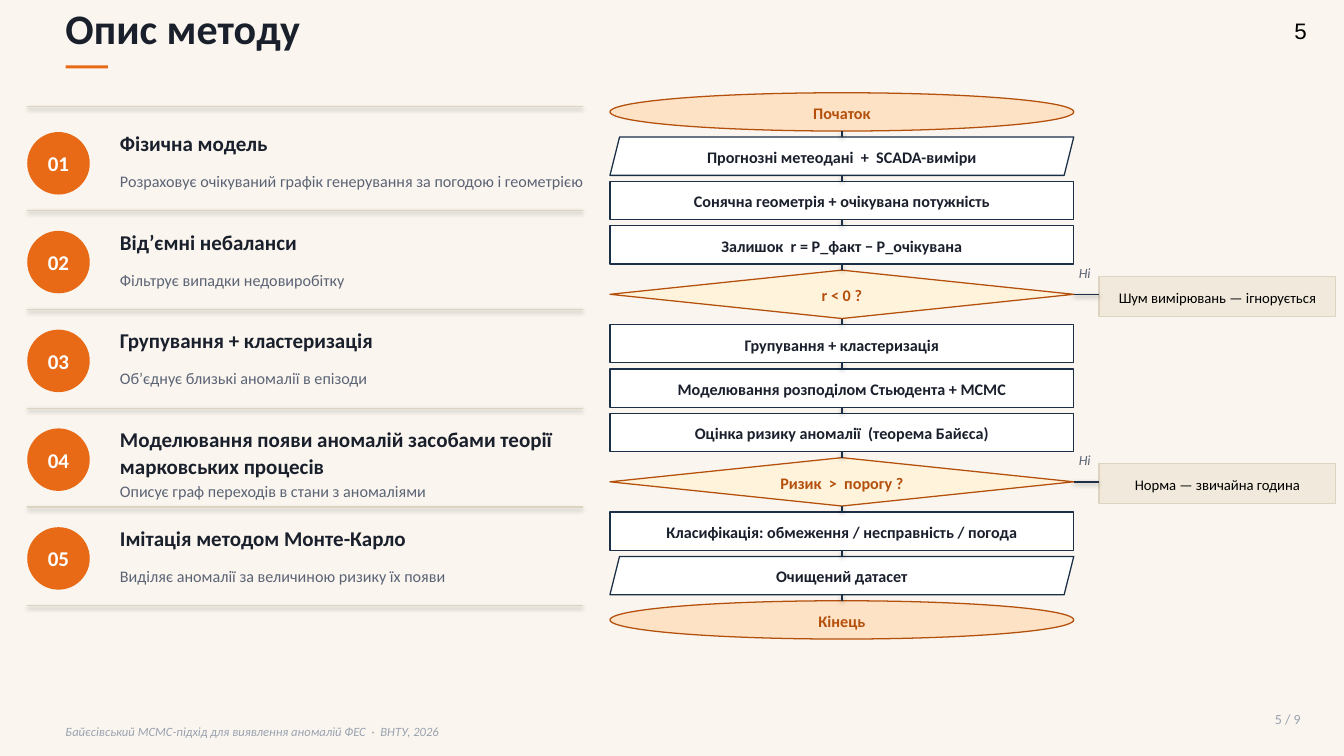
from pptx import Presentation
from pptx.dml.color import RGBColor
from pptx.enum.shapes import MSO_CONNECTOR as Link, MSO_SHAPE as Form
from pptx.enum.text import MSO_ANCHOR as Anchor, MSO_AUTO_SIZE as Fit, PP_ALIGN as Align
from pptx.util import Inches, Pt

TITLE = "Опис методу"
FOOTER = "Байєсівський MCMC-підхід для виявлення аномалій ФЕС  ·  ВНТУ, 2026"
PAGE, COUNT = "5", "5 / 9"
PARTS = [
    ("Фізична модель", "Розраховує очікуваний графік генерування за погодою і геометрією", 0.35),
    ("Відʼємні небаланси", "Фільтрує випадки недовиробітку", 0.35),
    ("Групування + кластеризація", "Обʼєднує близькі аномалії в епізоди", 0.35),
    ("Моделювання появи аномалій засобами теорії марковських процесів",
     "Описує граф переходів в стани з аномаліями", 0.49),
    ("Імітація методом Монте-Карло", "Виділяє аномалії за величиною ризику їх появи", 0.35),
]
STEPS = [
    ("end", "Початок"),
    ("data", "Прогнозні метеодані  +  SCADA-виміри"),
    ("work", "Сонячна геометрія + очікувана потужність"),
    ("work", "Залишок  r = P_факт − P_очікувана"),
    ("test", "r < 0 ?"),
    ("work", "Групування + кластеризація"),
    ("work", "Моделювання розподілом Стьюдента + MCMC"),
    ("work", "Оцінка ризику аномалії  (теорема Байєса)"),
    ("test", "Ризик  >  порогу ?"),
    ("work", "Класифікація: обмеження / несправність / погода"),
    ("data", "Очищений датасет"),
    ("end", "Кінець"),
]
NO = "Ні"
EXITS = {4: "Шум вимірювань — ігнорується", 8: "Норма — звичайна година"}

INK, NAVY, RUST, ORANGE = "1A1F2C", "1B2F47", "B44F0C", "E86A17"
GREY, PALE, SAND, BLACK, WHITE = "5B6375", "9AA1B0", "DCD3C1", "000000", "FFFFFF"
LOOKS = {
    "end": (Form.OVAL, 0.38, "FDE2C5", RUST, RUST),
    "data": (Form.PARALLELOGRAM, 0.38, WHITE, NAVY, INK),
    "work": (Form.RECTANGLE, 0.38, WHITE, NAVY, INK),
    "test": (Form.DIAMOND, 0.48, "FFF3DC", RUST, RUST),
}
WIDE, HIGH = 13.33, 7.5
EDGE = 0.65
LIST_X, LIST_W, TEXT_X, TEXT_W = 0.27, 5.51, 1.19, 5.4
LIST_Y, PITCH, DISC = 1.31, 0.98, 0.62
FLOW_X, FLOW_Y, FLOW_W, GAP = 6.05, 0.92, 4.6, 0.06
EXIT_X, EXIT_W, EXIT_H = 10.9, 2.35, 0.4

deck = Presentation()
deck.slide_width, deck.slide_height = Inches(WIDE), Inches(HIGH)
slide = deck.slides.add_slide(deck.slide_layouts[6])


def color(code):
    return RGBColor.from_string(code)


def write(frame, words, size, ink, bold=False, slant=False, align=Align.LEFT,
          lead=None, pad=(0, 0), face="Calibri"):
    frame.word_wrap = True
    frame.margin_left = frame.margin_right = Inches(pad[0])
    frame.margin_top = frame.margin_bottom = Inches(pad[1])
    para = frame.paragraphs[0]
    para.text, para.alignment, para.line_spacing = words, align, lead
    font = para.font
    font.name, font.size, font.bold, font.italic = face, Pt(size), bold, slant
    font.color.rgb = color(ink)


def label(box, words, size, ink, **style):
    frame = slide.shapes.add_textbox(*map(Inches, box)).text_frame
    write(frame, words, size, ink, **style)
    frame.auto_size = Fit.SHAPE_TO_FIT_TEXT


def block(form, box, fill, edge=None, width=0.9):
    shape = slide.shapes.add_shape(form, *map(Inches, box))
    shape.shadow.inherit = False
    shape.fill.solid()
    shape.fill.fore_color.rgb = color(fill)
    if edge:
        shape.line.color.rgb = color(edge)
        shape.line.width = Pt(width)
    else:
        shape.line.fill.background()
    shape.text_frame.vertical_anchor = Anchor.MIDDLE
    return shape


def rule(x1, y1, x2, y2, ink=NAVY, width=1):
    line = slide.shapes.add_connector(Link.STRAIGHT, *map(Inches, (x1, y1, x2, y2)))
    line.line.color.rgb = color(ink)
    line.line.width = Pt(width)


def draw_flow():
    top, mid, right = FLOW_Y, FLOW_X + FLOW_W / 2, FLOW_X + FLOW_W
    node = dict(align=Align.CENTER, lead=1.1, pad=(0.08, 0.03))
    for at, (kind, words) in enumerate(STEPS):
        form, high, fill, edge, ink = LOOKS[kind]
        shape = block(form, (FLOW_X, top, FLOW_W, high), fill, edge)
        if kind == "data":
            shape.adjustments[0] = 0.25
        write(shape.text_frame, words, 11.5, ink, bold=True, **node)
        if at:
            rule(mid, top - GAP, mid, top)
        if at in EXITS:
            side = block(Form.RECTANGLE, (EXIT_X, top + GAP, EXIT_W, EXIT_H), "F1EADC", SAND, 0.75)
            write(side.text_frame, EXITS[at], 10.5, BLACK, **node)
            rule(right, top + high / 2, EXIT_X, top + high / 2)
            label((right + 0.05, top - GAP, 0.5, 0.22), NO, 10, GREY, slant=True)
        top += high + GAP


def draw_list():
    rule(LIST_X, 1.06, LIST_X + LIST_W, 1.06, SAND, 0.75)
    for at, (head, note, drop) in enumerate(PARTS):
        top = LIST_Y + at * PITCH
        disc = block(Form.OVAL, (LIST_X, top, DISC, DISC), ORANGE)
        write(disc.text_frame, f"{at + 1:02}", 15, WHITE, bold=True, align=Align.CENTER)
        label((TEXT_X, top - 0.03, TEXT_W, drop), head, 15, INK, bold=True, lead=1.05)
        label((TEXT_X, top + drop, TEXT_W, 0.23), note, 11.5, GREY, lead=1.2)
        base = top + 0.78
        rule(LIST_X, base, LIST_X + LIST_W, base, SAND, 0.75)


def main():
    block(Form.RECTANGLE, (0, 0, WIDE, HIGH), "FAF6EF")
    label((EDGE, 0.03, 12, 0.5), TITLE, 30, INK, bold=True)
    block(Form.RECTANGLE, (EDGE, 0.65, 0.42, 0.03), ORANGE)
    draw_flow()
    draw_list()
    label((11.5, 7.05, 1.4, 0.3), COUNT, 10, PALE, align=Align.RIGHT)
    label((EDGE, 7.18, 8, 0.3), FOOTER, 9, PALE, slant=True)
    label((12.56, 0.12, 0.68, 0.37), PAGE, 16, BLACK, align=Align.CENTER,
          pad=(0.1, 0.05), face="Arial")
    deck.save("out.pptx")


if __name__ == "__main__":
    main()
